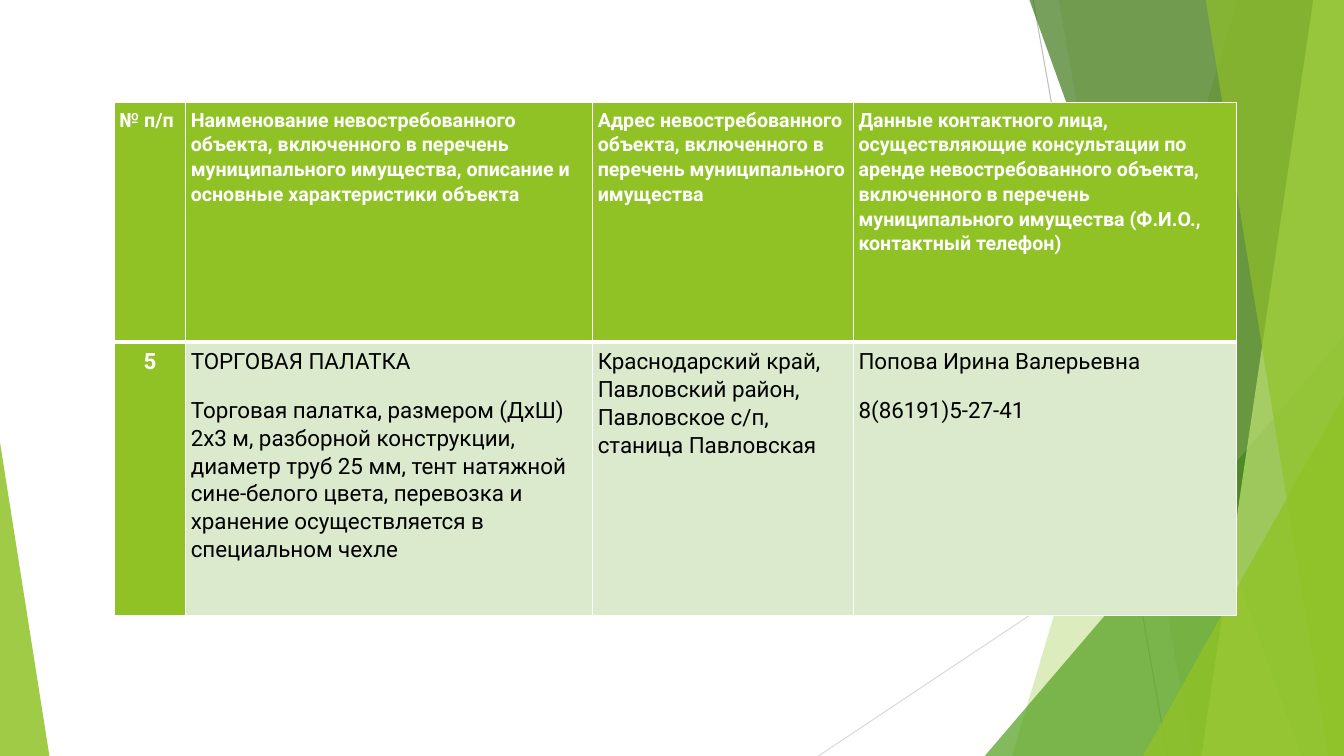
from lxml.etree import SubElement
from pptx import Presentation
from pptx.dml.color import RGBColor
from pptx.enum.shapes import MSO_CONNECTOR, MSO_SHAPE
from pptx.enum.text import PP_ALIGN
from pptx.oxml.ns import qn
from pptx.util import Pt

GREEN = "90C226"
PALE = "DBE9CD"
WHITE = "FFFFFF"
BLACK = "000000"
WIDTH, HEIGHT, BLEED = 960, 540, -0.7


def paint(fill, color):
    fill.solid()
    fill.fore_color.rgb = RGBColor.from_string(color)


def write(frame, text, size=16, color=BLACK, bold=False, align=PP_ALIGN.LEFT):
    for index, line in enumerate(text.split("\n")):
        para = frame.add_paragraph() if index else frame.paragraphs[0]
        para.alignment = align
        para.line_spacing = 1.07
        para.space_before = Pt(7.5 if index else 0)
        para.space_after = Pt(7.5)
        span = para.add_run()
        span.text = line
        span.font.name = "Roboto"
        span.font.size = Pt(size)
        span.font.bold = bold
        paint(span.font.fill, color)


deck = Presentation()
deck.slide_width, deck.slide_height = Pt(WIDTH), Pt(HEIGHT)
page = deck.slides.add_slide(deck.slide_layouts[6])
shapes = page.shapes

thin_lines = [(738, 0, 834, HEIGHT, "BFBFBF"), (WIDTH, 290, 584.6, HEIGHT, "D9D9D9")]
for x1, y1, x2, y2, color in thin_lines:
    connector = shapes.add_connector(MSO_CONNECTOR.STRAIGHT, Pt(x1), Pt(y1), Pt(x2), Pt(y2))
    connector.line.width = Pt(0.75)
    paint(connector.line.fill, color)
    SubElement(connector._element.spPr, qn("a:effectLst"))

# Bands: top x, bottom x. Triangles: left, top, width, apex.
facets = [
    ("band", (884.2, 722.9), GREEN, 30),
    ("band", (756, 851.8), GREEN, 20),
    ("triangle", (703.4, 240, 256.6, 1), "54A021", 72),
    ("band", (735.1, 929.5), "3F7819", 70),
    ("band", (938.2, 858.2), "C0E474", 70),
    ("band", (861.1, 949), GREEN, 65),
    ("triangle", (816.5, 283, 143.5, 1), GREEN, 80),
    ("triangle", (0, 316, 35.3, 0), GREEN, 85),
]
for kind, place, color, opacity in facets:
    if kind == "band":
        top_x, bottom_x = place
        outline = shapes.build_freeform(Pt(top_x), Pt(BLEED))
        corners = [(WIDTH, BLEED), (WIDTH, HEIGHT), (bottom_x, HEIGHT)]
        outline.add_line_segments([(Pt(x), Pt(y)) for x, y in corners], close=True)
        facet = outline.convert_to_shape()
    else:
        left, top, width, apex = place
        facet = shapes.add_shape(
            MSO_SHAPE.ISOSCELES_TRIANGLE, Pt(left), Pt(top), Pt(width), Pt(HEIGHT - top)
        )
        facet.adjustments[0] = apex
    facet.shadow.inherit = False
    facet.line.fill.background()
    paint(facet.fill, color)
    tint = facet._element.spPr.find(qn("a:solidFill"))[0]
    SubElement(tint, qn("a:alpha"), val=str(opacity * 1000))

column_widths = [51, 290.7, 186.3, 273.6]
row_heights = [171.4, 195.1]
rows = [
    [
        "№ п/п",
        "Наименование невостребованного объекта, включенного в перечень "
        "муниципального имущества, описание и основные характеристики объекта",
        "Адрес невостребованного объекта, включенного в перечень муниципального имущества",
        "Данные контактного лица, осуществляющие консультации по аренде "
        "невостребованного объекта, включенного в перечень муниципального "
        "имущества (Ф.И.О., контактный телефон)",
    ],
    [
        "5",
        "ТОРГОВАЯ ПАЛАТКА\nТорговая палатка, размером (ДхШ) 2х3 м, разборной "
        "конструкции, диаметр труб 25 мм, тент натяжной сине-белого цвета, "
        "перевозка и хранение осуществляется в специальном чехле",
        "Краснодарский край, Павловский район, Павловское с/п, станица Павловская",
        "Попова Ирина Валерьевна\n8(86191)5-27-41",
    ],
]
table = shapes.add_table(
    len(rows), len(column_widths), Pt(81.7), Pt(73), Pt(sum(column_widths)), Pt(sum(row_heights))
).table
for column, width in zip(table.columns, column_widths):
    column.width = Pt(width)
for row, height in zip(table.rows, row_heights):
    row.height = Pt(height)

for r, texts in enumerate(rows):
    for c, text in enumerate(texts):
        cell = table.cell(r, c)
        cell.margin_left = cell.margin_right = Pt(3.6)
        cell.margin_top = cell.margin_bottom = Pt(3.6)
        is_header = r == 0
        accent = is_header or c == 0
        divider = "lnB" if is_header else "lnT"
        for side in ("lnL", "lnR", "lnT", "lnB"):
            weight = Pt(3 if side == divider else 1)
            border = SubElement(cell._tc.get_or_add_tcPr(), qn("a:" + side), w=str(weight))
            SubElement(SubElement(border, qn("a:solidFill")), qn("a:srgbClr"), val=WHITE)
        paint(cell.fill, GREEN if accent else PALE)
        write(
            cell.text_frame,
            text,
            size=14 if is_header else 16,
            color=WHITE if accent else BLACK,
            bold=accent,
            align=PP_ALIGN.CENTER if accent and not is_header else PP_ALIGN.LEFT,
        )

deck.save("out.pptx")
